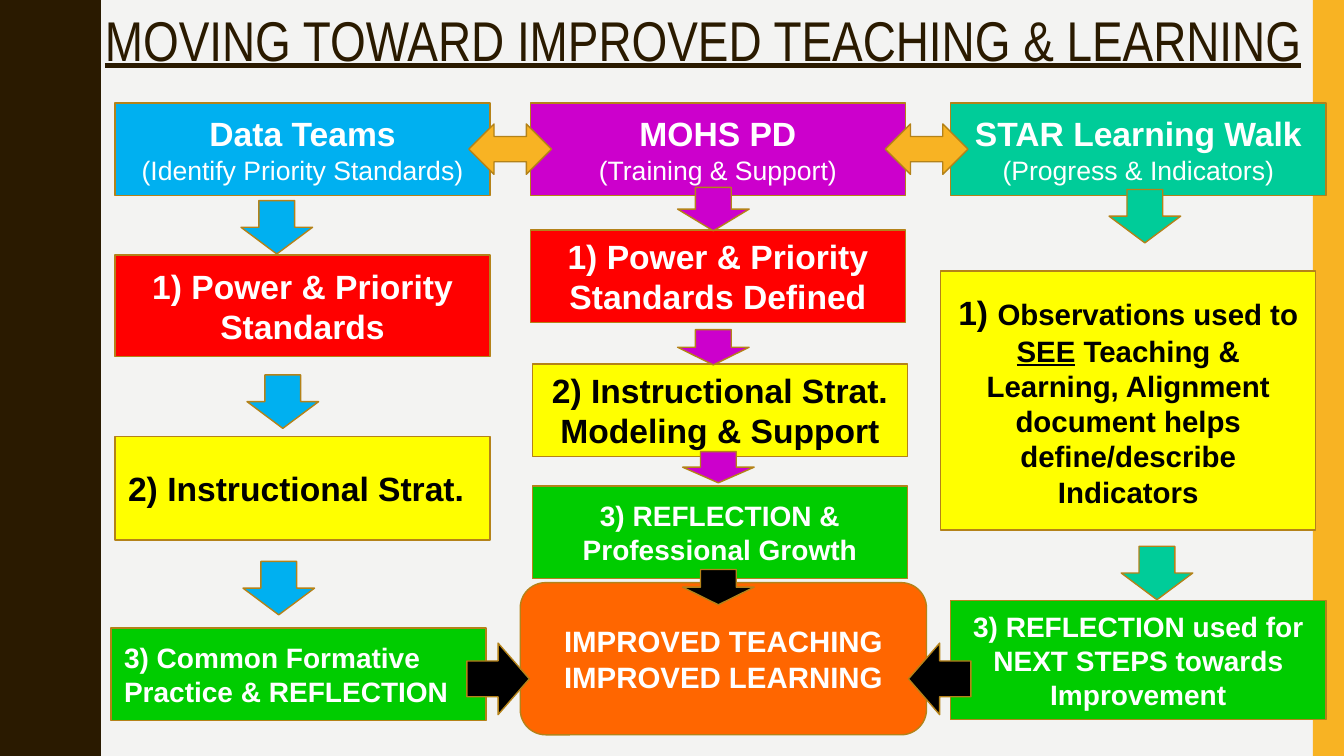
from pptx import Presentation
from pptx import util as u
from pptx.dml.color import RGBColor
from pptx.enum import shapes, text

TITLE = "MOVING TOWARD IMPROVED TEACHING & LEARNING"
W, H = 13.33, 7.5
DARK, GOLD, EDGE, WHITE, BLACK = "2A1A00", "F8B323", "B48219", "FFFFFF", "000000"
BLUE, PLUM, TEAL = "00B0F0", "CC00CC", "00CC99"
RED, YELLOW, GREEN, ORANGE = "FF0000", "FFFF00", "00CC00", "FF6600"
COLS = [1.14, 5.26, 9.43]
WIDE, ROW, TOP = 3.72, 0.92, 1.02
ARROW = 0.71

HEADS = [
    ("Data Teams", "(Identify Priority Standards)", BLUE),
    ("MOHS PD", "(Training & Support)", PLUM),
    ("STAR Learning Walk", "(Progress & Indicators)", TEAL),
]
# column, nudge, top, height, fill, ink, centred, runs of (text, size, underline)
STEPS = [
    (0, 0, 2.53, 1.01, RED, WHITE, True, [("1) Power & Priority Standards", 24, False)]),
    (0, 0, 4.33, 1.03, YELLOW, BLACK, False, [("2) Instructional Strat.", 24, False)]),
    (0, -0.04, 6.23, ROW, GREEN, WHITE, False,
     [("3) Common Formative Practice & REFLECTION", 20, False)]),
    (1, 0, 2.28, ROW, RED, WHITE, True, [("1) Power & Priority Standards Defined", 24, False)]),
    (1, 0.02, 3.61, ROW, YELLOW, BLACK, True,
     [("2) Instructional Strat. Modeling & Support", 24, False)]),
    (1, 0.02, 4.82, ROW, GREEN, WHITE, True,
     [("3) REFLECTION & Professional Growth", 20, False)]),
    (2, -0.1, 2.69, 2.57, YELLOW, BLACK, True,
     [("1) ", 24, False), ("Observations used to ", 21, False), ("SEE", 21, True),
      (" Teaching & Learning, Alignment document helps define/describe Indicators", 21, False)]),
    (2, 0, 5.96, 1.18, GREEN, WHITE, True,
     [("3) REFLECTION used for NEXT STEPS towards Improvement", 20, False)]),
]
GOAL = ["IMPROVED TEACHING", "IMPROVED LEARNING"]
DOWN = [
    (BLUE, 0.53, [(2.39, 1.99), (2.45, 3.72), (2.41, 5.57)]),
    (PLUM, 0.43, [(6.72, 1.86)]),
    (PLUM, 0.35, [(6.72, 3.27)]),
    (PLUM, 0.31, [(6.77, 4.48)]),
    (TEAL, 0.53, [(11, 1.88), (11.12, 5.42)]),
    (BLACK, 0.35, [(6.77, 5.65)]),
]
CURVE = [(0.78, 0), (0.78, 0.07), (0.79, 0.14), (0.8, 0.2), (0.81, 0.25),
         (0.83, 0.29), (0.85, 0.33), (0.87, 0.38), (0.89, 0.42), (0.91, 0.46),
         (0.93, 0.5), (0.95, 0.55), (0.96, 0.61), (0.97, 0.68), (0.97, 0.75)]
WAVE = 1.5

KIND = shapes.MSO_SHAPE
MID, LEFT = text.PP_ALIGN.CENTER, text.PP_ALIGN.LEFT


def tint(code):
    return RGBColor.from_string(code)


def paint(shape, fill, edge=None):
    shape.shadow.inherit = False
    shape.fill.solid()
    shape.fill.fore_color.rgb = tint(fill)
    if edge:
        shape.line.color.rgb = tint(edge)
        shape.line.width = u.Pt(1)
    else:
        shape.line.fill.background()
    return shape


def draw(kind, x, y, w, h, fill, edge=EDGE):
    box = map(u.Inches, (x, y, w, h))
    return paint(slide.shapes.add_shape(kind, *box), fill, edge)


def pad(frame, side, edge):
    frame.margin_left = frame.margin_right = u.Inches(side)
    frame.margin_top = frame.margin_bottom = u.Inches(edge)
    frame.word_wrap = True


def add(para, words, size, ink, face="Arial", bold=False, under=False):
    run = para.add_run()
    run.text = words
    font = run.font
    font.name, font.size, font.bold, font.underline = face, u.Pt(size), bold, under
    font.color.rgb = tint(ink)


def write(shape, paras, ink, align=MID):
    frame = shape.text_frame
    pad(frame, 0.13, 0.07)
    frame.vertical_anchor = text.MSO_ANCHOR.MIDDLE
    for i, runs in enumerate(paras):
        para = frame.add_paragraph() if i else frame.paragraphs[0]
        para.alignment = align
        for words, size, bold, under in runs:
            add(para, words, size, ink, bold=bold, under=under)


deck = Presentation()
deck.slide_width, deck.slide_height = u.Inches(W), u.Inches(H)
slide = deck.slides.add_slide(deck.slide_layouts[5])
slide.background.fill.solid()
slide.background.fill.fore_color.rgb = tint("F3F3F2")

half = CURVE + [(x, WAVE - y) for x, y in CURVE[-2::-1]]
edge = [(x, y + WAVE * i) for i in range(5) for x, y in half]
pen = slide.shapes.build_freeform(0, 0, scale=u.Inches(1))
pen.add_line_segments(edge + [(0, H)], close=True)
paint(pen.convert_to_shape(), DARK)
draw(KIND.RECTANGLE, 13.02, 0, 0.31, H, GOLD, None)

title = slide.shapes.title
title.left, title.top, title.width, title.height = map(u.Inches, (0.91, 0, 12.42, 0.89))
pad(title.text_frame, 0.13, 0.13)
title.text_frame.vertical_anchor = text.MSO_ANCHOR.TOP
head = title.text_frame.paragraphs[0]
head.alignment, head.line_spacing = LEFT, 0.9
add(head, TITLE, 40, DARK, "Arial Narrow", under=True)

for x, (name, note, fill) in zip(COLS, HEADS):
    box = draw(KIND.RECTANGLE, x, TOP, WIDE, ROW, fill)
    write(box, [[(name, 24, True, False)], [(note, 19, False, False)]], WHITE)
for x in (4.65, 8.78):
    draw(KIND.LEFT_RIGHT_ARROW, x, 1.23, 0.82, 0.5, GOLD)

for col, shift, y, h, fill, ink, mid, runs in STEPS:
    box = draw(KIND.RECTANGLE, COLS[col] + shift, y, WIDE, h, fill)
    write(box, [[(words, size, True, under) for words, size, under in runs]],
          ink, MID if mid else LEFT)

goal = draw(KIND.ROUNDED_RECTANGLE, 5.16, 5.78, 4.03, 1.51, ORANGE)
write(goal, [[(words, 21, True, False)] for words in GOAL], WHITE)

for fill, h, spots in DOWN:
    for x, y in spots:
        draw(KIND.DOWN_ARROW, x, y, ARROW, h, fill)
for kind, x in ((KIND.RIGHT_ARROW, 4.63), (KIND.LEFT_ARROW, 9.01)):
    draw(kind, x, 6.38, 0.62, ARROW, BLACK)

deck.save("out.pptx")
